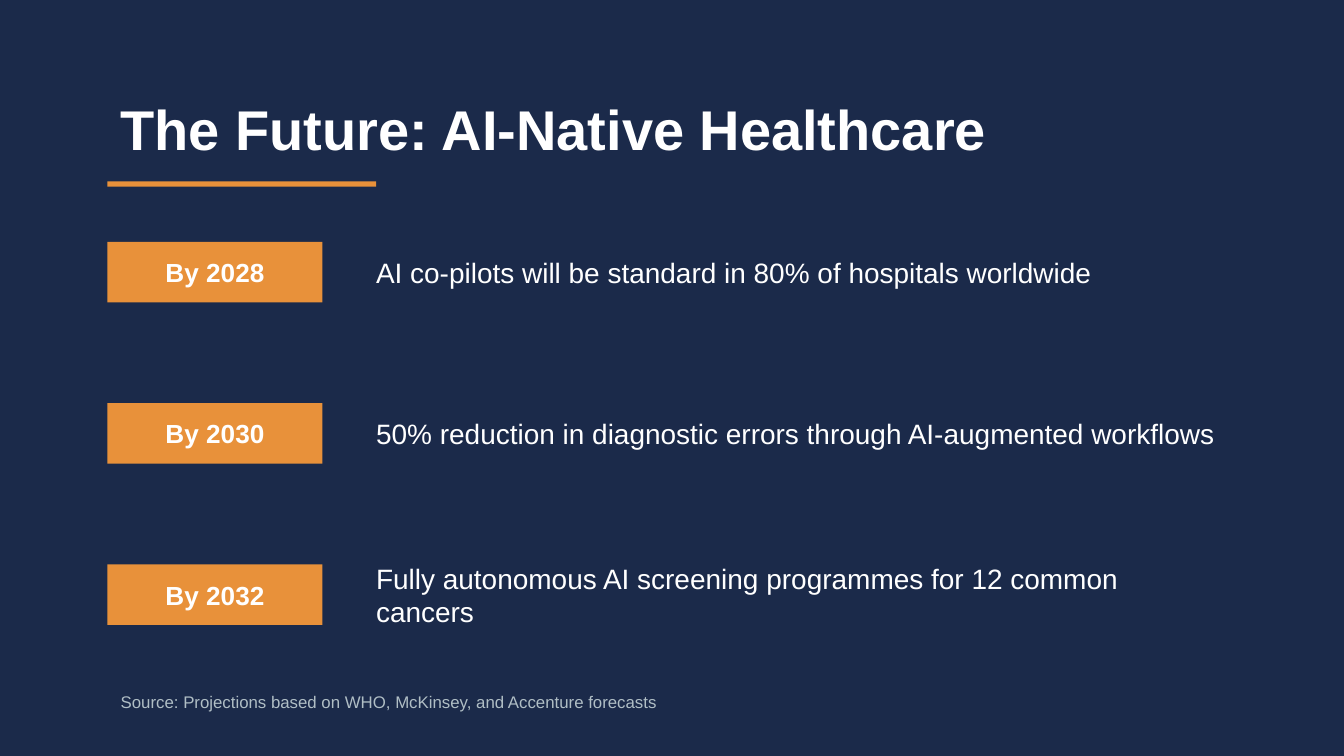
from pptx import Presentation
from pptx.dml.color import RGBColor
from pptx.enum import shapes, text
from pptx.util import Inches, Pt

NAVY = RGBColor(0x1B, 0x2A, 0x4A)
ORANGE = RGBColor(0xE8, 0x91, 0x3A)
WHITE = RGBColor(0xFF, 0xFF, 0xFF)
GREY = RGBColor(0xB0, 0xBE, 0xC5)
FONT = "Arial"

TITLE = "The Future: AI-Native Healthcare"
MILESTONES = [
    ("By 2028", "AI co-pilots will be standard in 80% of hospitals worldwide"),
    ("By 2030", "50% reduction in diagnostic errors through AI-augmented workflows"),
    ("By 2032", "Fully autonomous AI screening programmes for 12 common cancers"),
]
SOURCE = "Source: Projections based on WHO, McKinsey, and Accenture forecasts"

LEFT, CONTENT_WIDTH = 0.8, 8.4
FIRST_ROW, ROW_STEP, ROW_HEIGHT = 1.8, 1.2, 0.45
BADGE_WIDTH, BADGE_GAP = 1.6, 0.3


def add_text(slide, box, wording, size, color=WHITE, bold=False,
             align=text.PP_ALIGN.LEFT):
    frame = slide.shapes.add_textbox(*map(Inches, box)).text_frame
    frame.word_wrap = True
    frame.vertical_anchor = text.MSO_ANCHOR.MIDDLE
    paragraph = frame.paragraphs[0]
    paragraph.alignment = align
    run = paragraph.add_run()
    run.text = wording
    run.font.name = FONT
    run.font.size = Pt(size)
    run.font.bold = bold
    run.font.color.rgb = color


def add_bar(slide, box):
    """Add a plain orange rectangle."""
    bar = slide.shapes.add_shape(shapes.MSO_SHAPE.RECTANGLE, *map(Inches, box))
    bar.shadow.inherit = False
    bar.fill.solid()
    bar.fill.fore_color.rgb = ORANGE
    bar.line.fill.background()


def main():
    deck = Presentation()
    deck.slide_width = Inches(10)
    deck.slide_height = deck.slide_width * 9 // 16
    slide = deck.slides.add_slide(deck.slide_layouts[6])
    slide.background.fill.solid()
    slide.background.fill.fore_color.rgb = NAVY

    add_text(slide, (LEFT, 0.6, CONTENT_WIDTH, 0.7), TITLE, 30, bold=True)
    add_bar(slide, (LEFT, 1.35, 2, 0.04))

    forecast_left = LEFT + BADGE_WIDTH + BADGE_GAP
    forecast_width = LEFT + CONTENT_WIDTH - forecast_left
    for row, (year, forecast) in enumerate(MILESTONES):
        top = FIRST_ROW + row * ROW_STEP
        badge = (LEFT, top, BADGE_WIDTH, ROW_HEIGHT)
        add_bar(slide, badge)
        add_text(slide, badge, year, 14, bold=True, align=text.PP_ALIGN.CENTER)
        add_text(slide, (forecast_left, top, forecast_width, ROW_HEIGHT), forecast, 15)

    add_text(slide, (LEFT, 5.1, CONTENT_WIDTH, 0.25), SOURCE, 9, color=GREY)
    deck.save("out.pptx")


if __name__ == "__main__":
    main()
